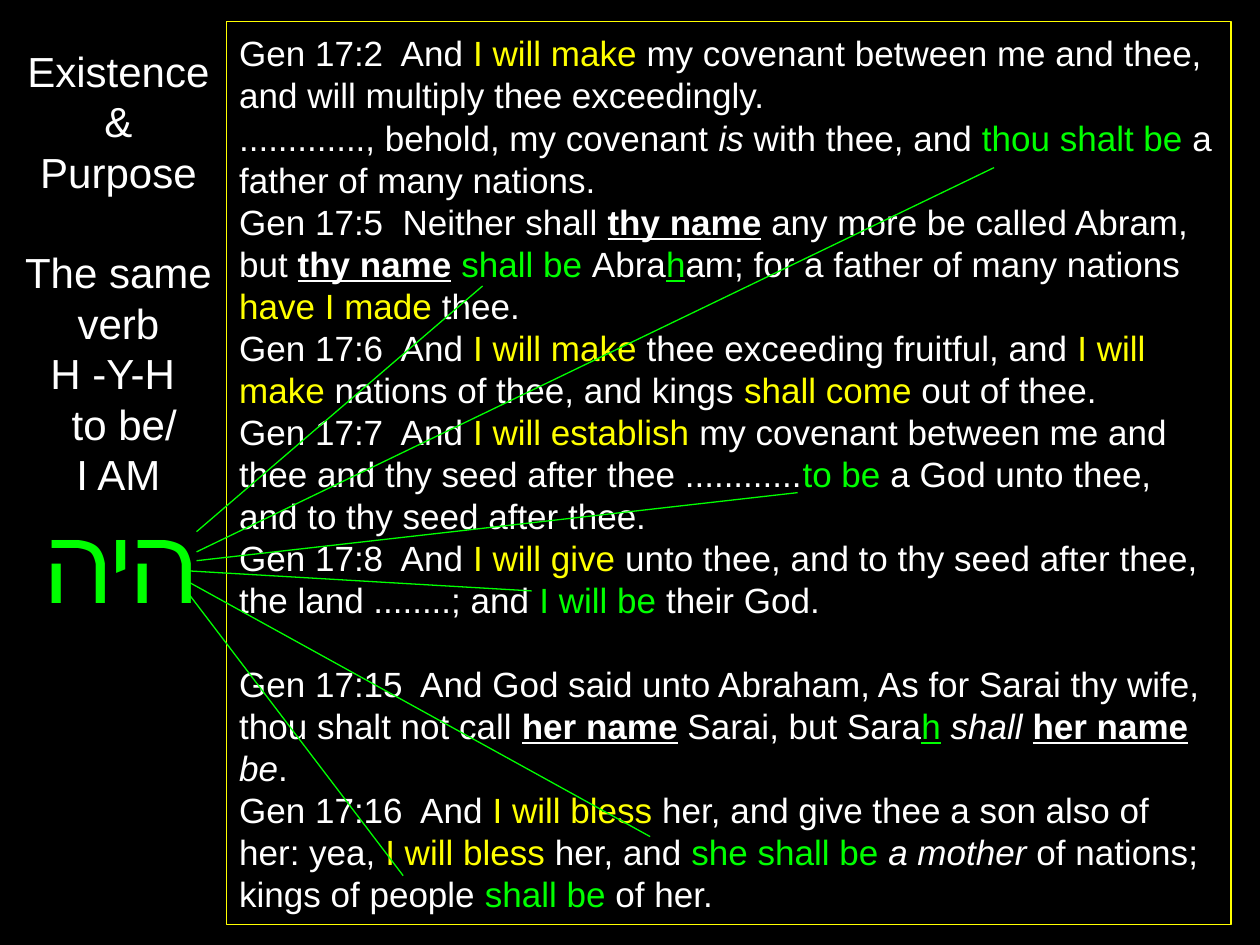
"""Build a slide tracing one Hebrew verb through Genesis 17."""
from lxml import etree
from pptx import Presentation
from pptx.dml.color import RGBColor
from pptx.enum.shapes import MSO_CONNECTOR, MSO_SHAPE
from pptx.enum.text import MSO_ANCHOR, MSO_AUTO_SIZE, PP_ALIGN
from pptx.oxml.ns import qn
from pptx.util import Inches, Pt

BLACK = RGBColor(0x00, 0x00, 0x00)
WHITE = RGBColor(0xFF, 0xFF, 0xFF)
YELLOW = RGBColor(0xFF, 0xFF, 0x00)
GREEN = RGBColor(0x00, 0xFF, 0x00)
RECTANGLE, STRAIGHT = MSO_SHAPE.RECTANGLE, MSO_CONNECTOR.STRAIGHT
LEFT, CENTER = PP_ALIGN.LEFT, PP_ALIGN.CENTER
TOP, MIDDLE = MSO_ANCHOR.TOP, MSO_ANCHOR.MIDDLE
FIT_SHAPE = MSO_AUTO_SIZE.SHAPE_TO_FIT_TEXT
LINE_PITCH = 1.2

PLAIN = {}
PROMISE = {"color": YELLOW}
BEING = {"color": GREEN}
LETTER = {"color": GREEN, "underline": True}
NAME = {"bold": True, "underline": True}
ITALIC = {"italic": True}

VERSES = [
    [("Gen 17:2  And ", PLAIN), ("I will make ", PROMISE),
     ("my covenant between me and thee, and will multiply thee exceedingly.", PLAIN)],
    [("............., behold, my covenant ", PLAIN), ("is", ITALIC),
     (" with thee, and ", PLAIN), ("thou shalt be ", BEING),
     ("a father of many nations.", PLAIN)],
    [("Gen 17:5  Neither shall ", PLAIN), ("thy name", NAME),
     (" any more be called Abram, but ", PLAIN), ("thy name", NAME), (" ", PLAIN),
     ("shall be ", BEING), ("Abra", PLAIN), ("h", LETTER),
     ("am; for a father of many nations ", PLAIN), ("have I made ", PROMISE),
     ("thee.", PLAIN)],
    [("Gen 17:6  And ", PLAIN), ("I will make ", PROMISE),
     ("thee exceeding fruitful, and ", PLAIN), ("I will make ", PROMISE),
     ("nations of thee, and kings ", PLAIN), ("shall come ", PROMISE),
     ("out of thee.", PLAIN)],
    [("Gen 17:7  And ", PLAIN), ("I will establish ", PROMISE),
     ("my covenant between me and thee and thy seed after thee ............", PLAIN),
     ("to be ", BEING), ("a God unto thee, and to thy seed after thee.", PLAIN)],
    [("Gen 17:8  And ", PLAIN), ("I will give ", PROMISE),
     ("unto thee, and to thy seed after thee, the land ........; and ", PLAIN),
     ("I will be ", BEING), ("their God.", PLAIN)],
    [("Gen 17:15  And God said unto Abraham, As for Sarai thy wife, "
      "thou shalt not call ", PLAIN), ("her name", NAME),
     (" Sarai, but Sara", PLAIN), ("h", LETTER), (" ", PLAIN), ("shall ", ITALIC),
     ("her name", NAME), (" ", PLAIN), ("be", ITALIC), (".", PLAIN)],
    [("Gen 17:16  And ", PLAIN), ("I will bless ", PROMISE),
     ("her, and give thee a son also of her: yea, ", PLAIN),
     ("I will bless ", PROMISE), ("her, and ", PLAIN), ("she shall be ", BEING),
     ("a mother", ITALIC), (" of nations; kings of people ", PLAIN),
     ("shall be ", BEING), ("of her.", PLAIN)],
]
SARAH_VERSE = 6
THEME_LINES = ["Existence", "&", "Purpose", "The same verb", "H -Y-H ", " to be/", "I AM"]
VERB_LINE = 3
HEBREW_VERB = "היה"
RAYS = [
    ((1.56, 4.22), (3.83, 2.27)),
    ((1.56, 4.38), (7.89, 1.33)),
    ((1.56, 4.45), (6.33, 3.91)),
    ((1.48, 4.53), (4.22, 4.69)),
    ((1.48, 4.69), (3.2, 6.95)),
    ((1.48, 4.61), (5.16, 6.64)),
]


def prepare_frame(frame, anchor):
    frame.word_wrap = True
    frame.auto_size = FIT_SHAPE
    frame.vertical_anchor = anchor


def add_run(paragraph, text, size, font="Arial", color=WHITE, **emphasis):
    run = paragraph.add_run()
    run.text = text
    run.font.name, run.font.size = font, Pt(size)
    run.font.color.rgb = color
    for effect, value in emphasis.items():
        setattr(run.font, effect, value)


def write_paragraphs(frame, paragraphs, size, alignment, gap_before):
    for index, pieces in enumerate(paragraphs):
        paragraph = frame.add_paragraph() if index else frame.paragraphs[0]
        paragraph.alignment = alignment
        paragraph.line_spacing = Pt(size * LINE_PITCH)
        if index == gap_before:
            paragraph.space_before = Pt(size * LINE_PITCH)
        for text, style in pieces:
            add_run(paragraph, text, size, **style)


def add_verses(slide):
    panel = slide.shapes.add_shape(
        RECTANGLE, Inches(1.8), Inches(0.17), Inches(7.97), Inches(7.17))
    panel.shadow.inherit = False
    panel.fill.background()
    panel.line.color.rgb = YELLOW
    panel.line.width = Pt(0.75)
    prepare_frame(panel.text_frame, MIDDLE)
    write_paragraphs(panel.text_frame, VERSES, 20, LEFT, SARAH_VERSE)


def add_theme(slide):
    theme = slide.shapes.add_textbox(
        Inches(0.08), Inches(0.31), Inches(1.72), Inches(4.75)).text_frame
    prepare_frame(theme, TOP)
    lines = [[(line, PLAIN)] for line in THEME_LINES]
    write_paragraphs(theme, lines, 24, CENTER, VERB_LINE)
    verb = theme.add_paragraph()
    verb.alignment = LEFT
    verb._p.get_or_add_pPr().set("marL", str(Inches(0.18)))
    add_run(verb, HEBREW_VERB, 60, font="Calibri", color=GREEN)


def add_rays(slide):
    for start, end in RAYS:
        ray = slide.shapes.add_connector(
            STRAIGHT, *(Inches(value) for value in start + end))
        ray.line.color.rgb = GREEN
        ray.line.width = Pt(0.75)
        etree.SubElement(ray._element.spPr, qn("a:effectLst"))


def main():
    presentation = Presentation()
    presentation.slide_width = Inches(10)
    presentation.slide_height = Inches(7.5)
    slide = presentation.slides.add_slide(presentation.slide_layouts[6])
    slide.background.fill.solid()
    slide.background.fill.fore_color.rgb = BLACK
    add_verses(slide)
    add_theme(slide)
    add_rays(slide)
    presentation.save("out.pptx")


if __name__ == "__main__":
    main()
